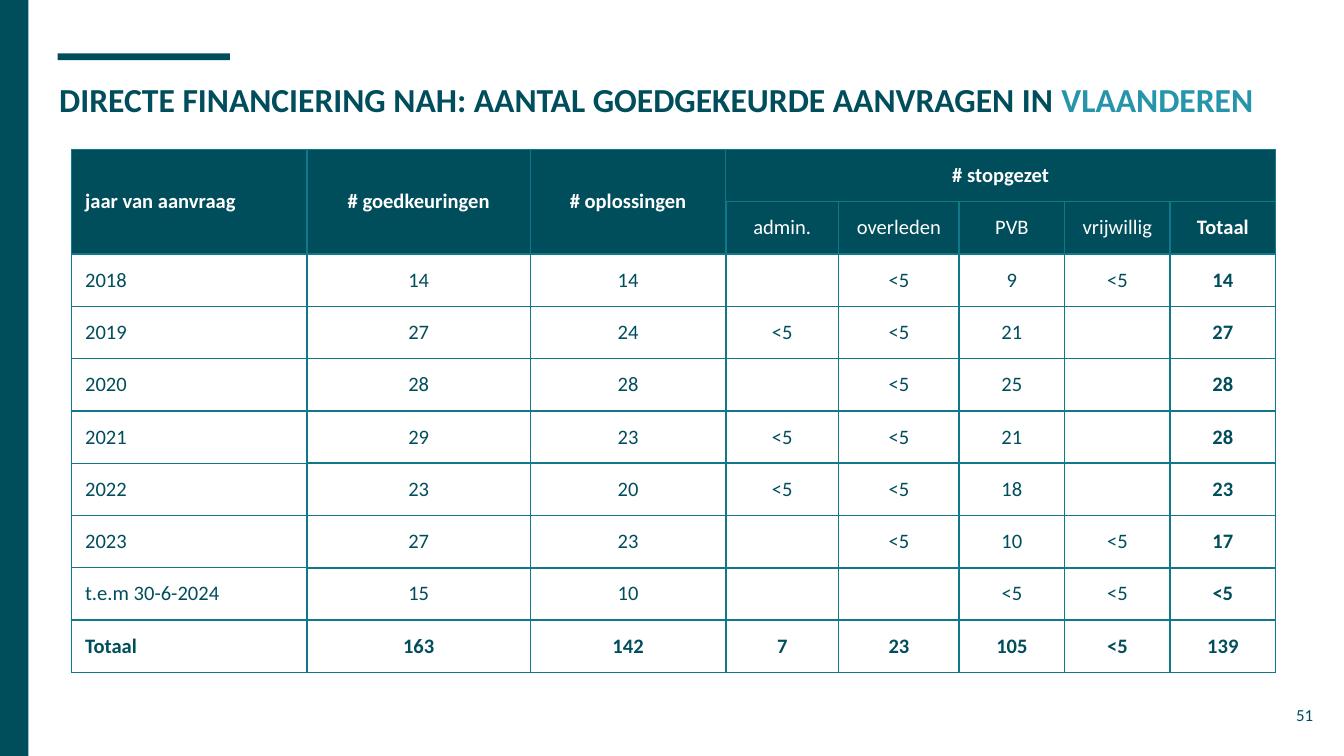
from lxml import etree
from pptx import Presentation
from pptx.dml.color import RGBColor
from pptx.enum import shapes, text
from pptx.oxml.ns import qn
from pptx.util import Pt

COLORS = {"dark": "004D5C", "accent": "2695AB", "border": "11788C", "white": "FFFFFF"}
FONT = "Calibri"


def style(p, size, color, bold=False, align=text.PP_ALIGN.LEFT):
    p.alignment = align
    f = p.font
    f.name, f.size, f.bold = FONT, Pt(size), bold
    f.color.rgb = RGBColor.from_string(COLORS[color])


def set_borders(cell, widths):
    """Give the cell's left, right, top and bottom edges these widths in points."""
    tc_pr = cell._tc.get_or_add_tcPr()
    for i, (side, width) in enumerate(zip(("lnL", "lnR", "lnT", "lnB"), widths)):
        ln = etree.Element(qn("a:" + side), w=str(Pt(width)))
        fill = etree.SubElement(ln, qn("a:solidFill"))
        etree.SubElement(fill, qn("a:srgbClr"), val=COLORS["border"])
        tc_pr.insert(i, ln)  # edges come before the cell fill


prs = Presentation()
prs.slide_width, prs.slide_height = Pt(720), Pt(405)
s = prs.slides.add_slide(prs.slide_layouts[5])

# Side band and accent bar
for box in ((30.9, 28.6, 92.3, 3.6), (0, 0, 15.2, 405)):
    sp = s.shapes.add_shape(shapes.MSO_SHAPE.RECTANGLE, *map(Pt, box))
    sp.shadow.inherit = False
    sp.fill.solid()
    sp.fill.fore_color.rgb = RGBColor.from_string(COLORS["dark"])
    sp.line.fill.background()

# Title
title = s.shapes.title
title.left, title.top, title.width, title.height = map(Pt, (24.5, 35.3, 671, 45.4))
tf = title.text_frame
tf.auto_size = text.MSO_AUTO_SIZE.NONE
tf.vertical_anchor = text.MSO_ANCHOR.TOP
tf.margin_left = tf.margin_right = tf.margin_top = tf.margin_bottom = Pt(7.2)
p = tf.paragraphs[0]
style(p, 18, "dark", bold=True)
p.add_run().text = "DIRECTE FINANCIERING NAH: AANTAL GOEDGEKEURDE AANVRAGEN IN "
r = p.add_run()
r.text = "VLAANDEREN"
r.font.color.rgb = RGBColor.from_string(COLORS["accent"])

# Table of approved requests; None marks a cell covered by a merge
rows = [
    ["jaar van aanvraag", "# goedkeuringen", "# oplossingen", "# stopgezet"] + [None] * 4,
    [None] * 3 + ["admin.", "overleden", "PVB", "vrijwillig", "Totaal"],
    ["2018", "14", "14", "", "<5", "9", "<5", "14"],
    ["2019", "27", "24", "<5", "<5", "21", "", "27"],
    ["2020", "28", "28", "", "<5", "25", "", "28"],
    ["2021", "29", "23", "<5", "<5", "21", "", "28"],
    ["2022", "23", "20", "<5", "<5", "18", "", "23"],
    ["2023", "27", "23", "", "<5", "10", "<5", "17"],
    ["t.e.m 30-6-2024", "15", "10", "", "", "<5", "<5", "<5"],
    ["Totaal", "163", "142", "7", "23", "105", "<5", "139"],
]
col_widths = [126, 119.8, 104.6, 60.5, 64.6, 56.5, 56.5, 56.5]
row_height = 27.95
last_row, last_col = len(rows) - 1, len(col_widths) - 1

frame = s.shapes.add_table(len(rows), len(col_widths), Pt(38.4), Pt(80.1),
                           Pt(sum(col_widths)), Pt(row_height * len(rows)))
table = frame.table
table.horz_banding = table.first_row = False
for col, width in zip(table.columns, col_widths):
    col.width = Pt(width)
for row in table.rows:
    row.height = Pt(row_height)
for c in range(3):
    table.cell(0, c).merge(table.cell(1, c))
table.cell(0, 3).merge(table.cell(0, last_col))

for i, row in enumerate(rows):
    for j, value in enumerate(row):
        cell = table.cell(i, j)
        header = i < 2
        cell.fill.solid()
        cell.fill.fore_color.rgb = RGBColor.from_string(COLORS["dark" if header else "white"])
        thin = i == 0 or j == 0
        set_borders(cell, (0.75 if thin or (j == 1 and i > 1) else 1,
                           0.75 if thin or j == last_col else 1,
                           0.75 if thin or i < 3 else 1,
                           0.75 if thin or header else 1))
        side = 7.2 if j == 0 or i == 0 else 3.6
        cell.margin_left = cell.margin_right = Pt(side)
        cell.margin_top = cell.margin_bottom = Pt(7.2)
        if i == 0 and j < 3:
            cell.vertical_anchor = text.MSO_ANCHOR.MIDDLE
        p = cell.text_frame.paragraphs[0]
        style(p, 11, "white" if header else "dark",
              bold=i in (0, last_row) or j == last_col,
              align=text.PP_ALIGN.CENTER if j else text.PP_ALIGN.LEFT)
        if value:
            p.add_run().text = value

# Page number
tf = s.shapes.add_textbox(Pt(667.4), Pt(367.2), Pt(43.2), Pt(31)).text_frame
tf.word_wrap = True
tf.vertical_anchor = text.MSO_ANCHOR.MIDDLE
tf.margin_left = tf.margin_right = tf.margin_top = tf.margin_bottom = Pt(7.2)
p = tf.paragraphs[0]
style(p, 9, "dark", align=text.PP_ALIGN.RIGHT)
p.add_run().text = "51"

prs.save("out.pptx")
